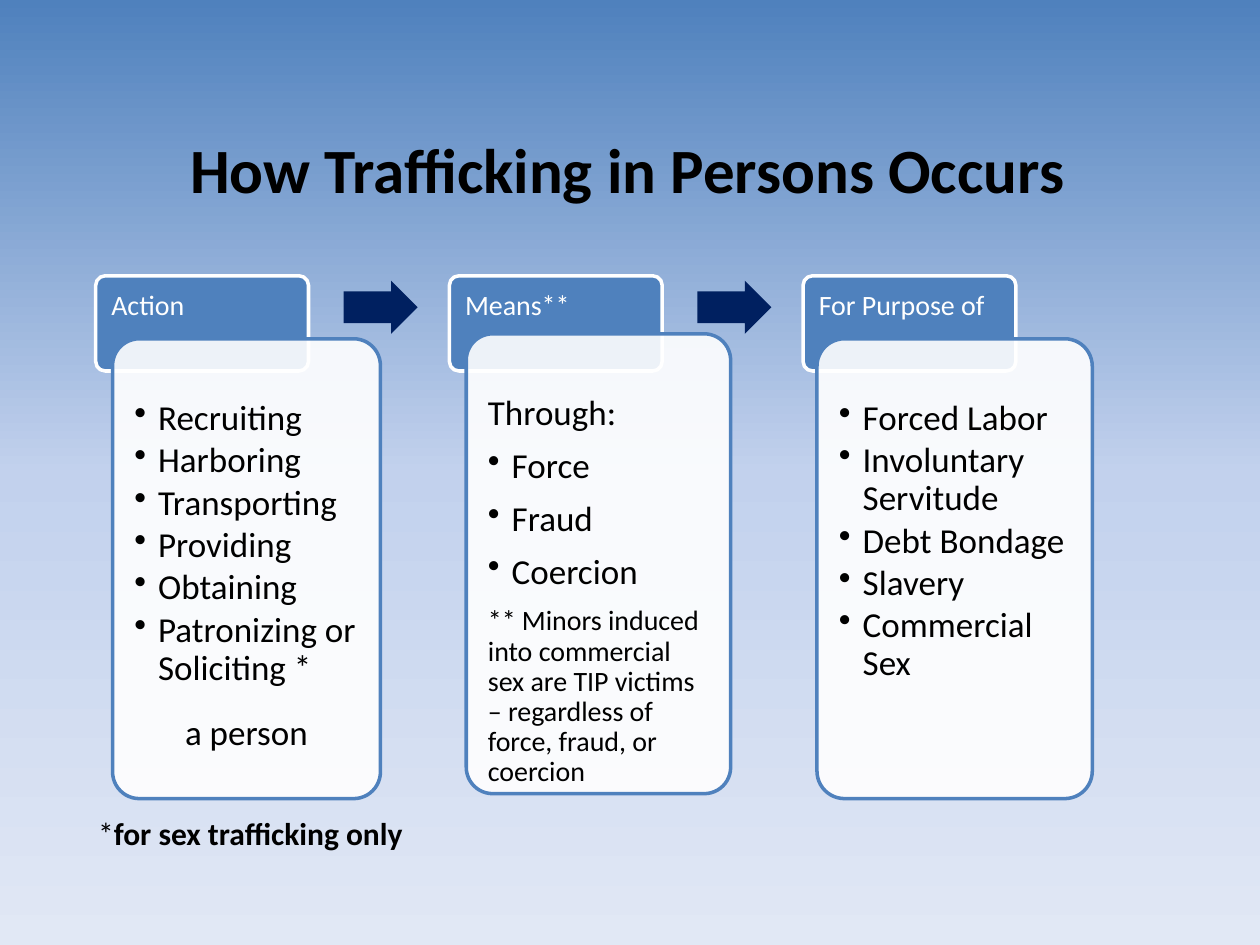
from collections import namedtuple
from copy import deepcopy

from lxml import etree
from pptx import Presentation
from pptx import util as u
from pptx.dml.color import RGBColor
from pptx.enum import shapes, text
from pptx.oxml.ns import qn

Cm, Pt = u.Cm, u.Pt
Theme = namedtuple("Theme", "font blue navy white black sky head body small note")
theme = Theme("Calibri", "4F81BD", "002060", "FFFFFF", "000000",
              [(0, "4F81BD"), (0.5, "C2D1ED"), (1, "E1E8F5")], 36, 20, 16, 18)


def write(frame, words, size=theme.body, color=theme.black, bold=False, first=False,
          bullet=False, align=None, line=None, before=None, after=None):
    """Add a paragraph, or fill the first one; words may be (text, bold) pairs."""
    para = frame.paragraphs[0] if first else frame.add_paragraph()
    props = para._p.get_or_add_pPr()
    if bullet:
        props.set("marL", str(Cm(0.48)))
        props.set("indent", str(-Cm(0.48)))
        etree.SubElement(props, qn("a:buChar"), char="•")
    para.alignment, para.line_spacing = align, line
    para.space_before = None if before is None else Pt(before)
    para.space_after = None if after is None else Pt(after)
    for part, heavy in [(words, bold)] if isinstance(words, str) else words:
        run = para.add_run()
        run.text = part
        font = run.font
        font.name, font.size, font.bold = theme.font, Pt(size), heavy
        font.color.rgb = RGBColor.from_string(color)


def draw(kind, box, fill, edge=None, pads=(0, 0, 0, 0)):
    """Add a preset shape with its text at top left."""
    shape = slide.shapes.add_shape(kind, *[Cm(n) for n in box])
    shape.shadow.inherit = False
    shape.fill.solid()
    shape.fill.fore_color.rgb = RGBColor.from_string(fill)
    if edge:
        shape.line.color.rgb = RGBColor.from_string(edge)
        shape.line.width = Pt(2)
    else:
        shape.line.fill.background()
    frame = shape.text_frame
    frame.word_wrap = True
    frame.vertical_anchor = text.MSO_ANCHOR.TOP
    (frame.margin_left, frame.margin_top,
     frame.margin_right, frame.margin_bottom) = [Cm(n) for n in pads]
    return shape


deck = Presentation()
deck.slide_width, deck.slide_height = Cm(25.4), Cm(19.05)
slide = deck.slides.add_slide(deck.slide_layouts[5])

# Background gradient, top to bottom
back = slide.background.fill
back.gradient()
back.gradient_angle = 270
stops = slide._element.find(".//" + qn("a:gsLst"))
stops.insert(1, deepcopy(stops[0]))
for stop, (place, color) in zip(back.gradient_stops, theme.sky):
    stop.position = place
    stop.color.rgb = RGBColor.from_string(color)

# Title
title = slide.shapes.title
title.left, title.top, title.width, title.height = Cm(1.37), Cm(2.54), Cm(22.56), Cm(1.7)
title.text_frame.vertical_anchor = text.MSO_ANCHOR.MIDDLE
write(title.text_frame, "How Trafficking in Persons Occurs", size=theme.head, bold=True,
      first=True, align=text.PP_ALIGN.CENTER)

# Columns: heading, card box, card lines with their format
dot = dict(bullet=True)
wide = dict(bullet=True, before=6)
columns = [
    ("Action", (2.27, 6.83, 5.4, 9.27),
     [(item, dot) for item in ("Recruiting", "Harboring", "Transporting", "Providing",
                               "Obtaining", "Patronizing or Soliciting *")]
     + [("a person", dict(align=text.PP_ALIGN.CENTER, before=13))]),
    ("Means**", (9.4, 6.73, 5.33, 9.27),
     [("Through:", {})] + [(item, wide) for item in ("Force", "Fraud", "Coercion")]
     + [("** Minors induced into commercial sex are TIP victims – regardless of force, "
         "fraud, or coercion", dict(size=theme.small, before=6))]),
    ("For Purpose of", (16.47, 6.83, 5.55, 9.27),
     [(item, dot) for item in ("Forced Labor", "Involuntary Servitude", "Debt Bondage",
                               "Slavery", "Commercial Sex")]),
]
left, pitch = 1.93, 7.13
for num, (name, box, lines) in enumerate(columns):
    start = left + num * pitch

    # Heading tab
    tab = draw(shapes.MSO_SHAPE.ROUNDED_RECTANGLE, (start, 5.56, 4.29, 1.92),
               theme.blue, theme.white, (0.26, 0.26, 0.26, 0.75))
    tab.adjustments[0] = 0.1
    write(tab.text_frame, name, size=theme.small, color=theme.white, first=True, line=0.9)

    # Card over the tab
    card = draw(shapes.MSO_SHAPE.ROUNDED_RECTANGLE, box, theme.white, theme.blue,
                (0.28, 1.08, 0.28, 0))
    card.adjustments[0] = 0.1
    tint = card.fill._xPr.find(qn("a:solidFill"))[0]
    etree.SubElement(tint, qn("a:alpha"), val="90000")
    for row, (words, style) in enumerate(lines):
        write(card.text_frame, words, first=row == 0, line=0.9, after=2.6, **style)

    # Arrow to the next column
    if num < len(columns) - 1:
        arrow = draw(shapes.MSO_SHAPE.RIGHT_ARROW, (start + 5, 5.66, 1.49, 1.07), theme.navy)
        arrow.adjustments[0] = 0.6

# Footnote
note = slide.shapes.add_textbox(Cm(1.73), Cm(16.28), Cm(6.78), Cm(1.02)).text_frame
note.word_wrap = True
write(note, [("*", False), ("for sex trafficking only", True)], size=theme.note, first=True)

deck.save("out.pptx")
